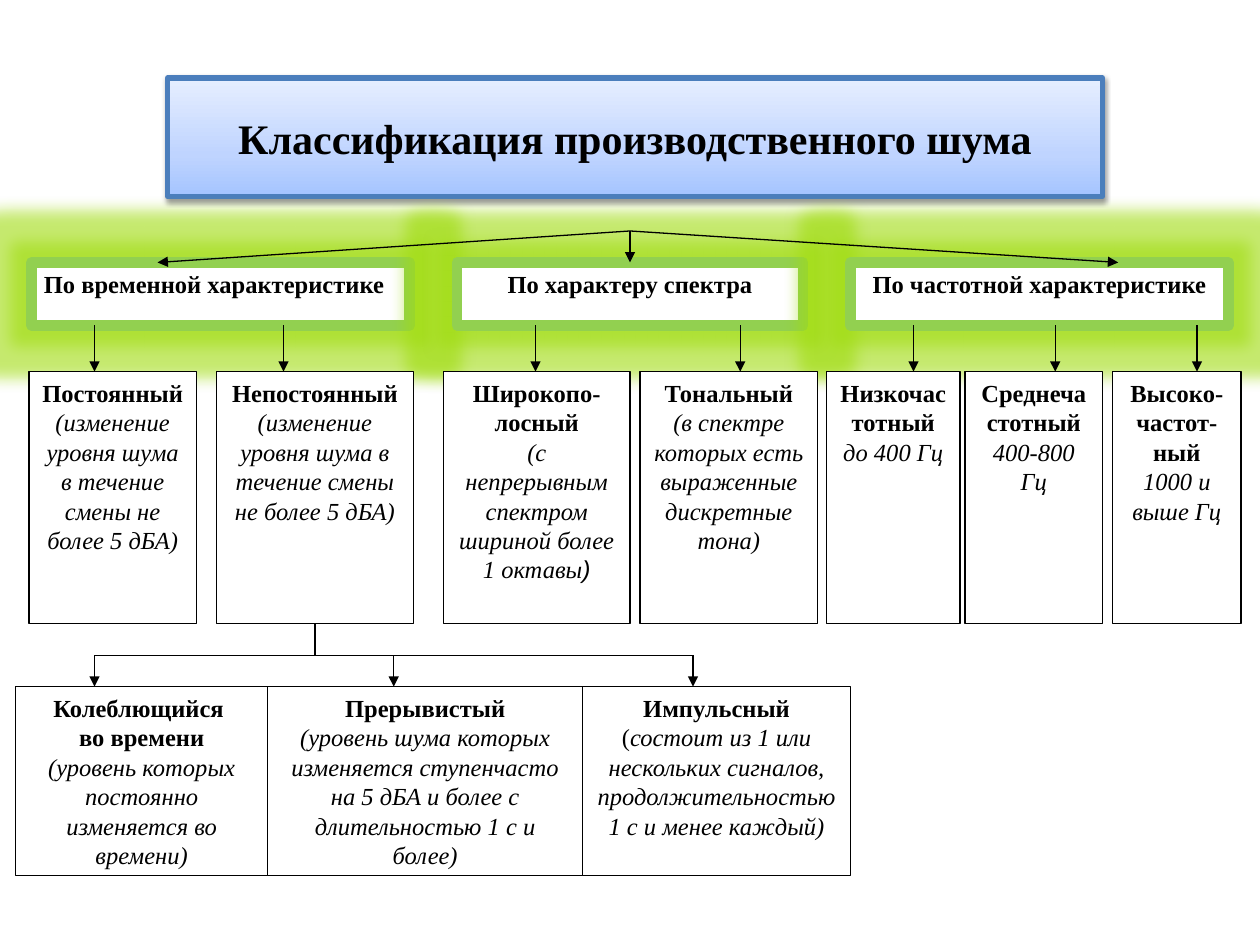
from dataclasses import dataclass

from lxml.etree import SubElement
from pptx import Presentation
from pptx.dml.color import RGBColor
from pptx.enum.shapes import MSO_CONNECTOR, MSO_SHAPE
from pptx.enum.text import MSO_ANCHOR, PP_ALIGN
from pptx.oxml import parse_xml
from pptx.oxml.ns import nsdecls, qn
from pptx.util import Inches, Pt


@dataclass(frozen=True)
class Theme:
    font: str = "Times New Roman"
    alt_font: str = "Arial"
    ink: str = "000000"
    paper: str = "FFFFFF"
    green: str = "92D050"
    glow: str = "A0DC10"
    blue: str = "4B7EBC"
    gradient: tuple = ((0, "A4C4FF"), (35, "BFD4FF"), (100, "E6EEFF"))
    title_size: int = 24
    body_size: int = 14
    hairline: float = 0.75
    title_line: int = 3
    category_line: int = 6


T = Theme()
W, H = Inches(10), Inches(7.5)
COL, ROW = W / 80, H / 90
BOLD, ITALIC, PLAIN = "bold", "italic", "plain"

TITLE_BOX = (10.64, 7.44, 59.36, 11.28)
FORK_ROW, CATEGORY_ROW, CATEGORY_ROWS = 22, 25, 6
LEAF_ROW, LEAF_ROWS = 35.4, 24
BUS_ROW, SUBTYPE_ROW, SUBTYPE_ROWS = 62.4, 65.4, 18

CATEGORIES = [
    ("По временной характеристике", 2, 24, PP_ALIGN.LEFT, 10),
    ("По характеру спектра", 29, 22, PP_ALIGN.CENTER, 40),
    ("По частотной характеристике", 54, 24, PP_ALIGN.CENTER, 71),
]
LEAVES = [
    (1.84, 10.64, 6, ["Постоянный"],
     [("(изменение уровня шума в течение смены не более 5 дБА)", ITALIC)]),
    (13.76, 12.48, 18, ["Непостоянный "],
     [("(изменение уровня шума в течение смены не более 5 дБА)", ITALIC)]),
    (28.16, 11.84, 34, ["Широкопо-лосный"],
     [("(с непрерывным спектром шириной более 1 октавы", ITALIC),
      (")", ITALIC, T.alt_font)]),
    (40.64, 11.28, 47, ["Тональный"],
     [("(в спектре которых есть выраженные дискретные тона)", ITALIC)]),
    (52.48, 8.48, 58, ["Низкочастотный"], [("до 400 Гц", ITALIC)]),
    (61.28, 8.72, 67, ["Среднечастотный"], [("400-800 Гц", ITALIC)]),
    (70.64, 8.16, 76, ["Высоко-частот-ный"], [("1000 и выше Гц", ITALIC)]),
]
SUBTYPES = [
    (1, 16, 6, ["Колеблющийся ", "во времени"],
     [("(уровень которых постоянно изменяется во времени)", ITALIC)]),
    (17, 20, 25, ["Прерывистый"],
     [("(уровень шума которых изменяется ступенчасто на 5 дБА и более "
       "с длительностью 1 с и более)", ITALIC)]),
    (37, 17, 44, ["Импульсный"],
     [("(", PLAIN),
      ("состоит из 1 или нескольких сигналов, "
       "продолжительностью 1 с и менее каждый)", ITALIC)]),
]


def rgb(value):
    return RGBColor.from_string(value)


def add_box(s, box, line, width):
    x, y, w, h = box
    sp = s.shapes.add_shape(MSO_SHAPE.RECTANGLE, round(x * COL), round(y * ROW),
                            round(w * COL), round(h * ROW))
    sp.shadow.inherit = False
    sp.fill.solid()
    sp.fill.fore_color.rgb = rgb(T.paper)
    sp.line.color.rgb = rgb(line)
    sp.line.width = Pt(width)
    sp.text_frame.word_wrap = True
    sp.text_frame.vertical_anchor = MSO_ANCHOR.TOP
    return sp


def add_text(sp, paragraphs, align=PP_ALIGN.CENTER, size=T.body_size):
    tf = sp.text_frame
    for i, runs in enumerate(paragraphs):
        p = tf.add_paragraph() if i else tf.paragraphs[0]
        p.alignment = align
        for text, style, *font in runs:
            r = p.add_run()
            r.text = text
            r.font.name = font[0] if font else T.font
            r.font.size = Pt(size)
            r.font.color.rgb = rgb(T.ink)
            r.font.bold = style == BOLD
            r.font.italic = style == ITALIC


def add_effect(sp, name, color, alpha, **attrs):
    effects = sp._element.spPr.find(qn("a:effectLst"))
    effect = SubElement(effects, qn(f"a:{name}"), {k: str(v) for k, v in attrs.items()})
    clr = SubElement(effect, qn("a:srgbClr"), val=color)
    SubElement(clr, qn("a:alpha"), val=str(alpha * 1000))


def set_gradient(sp, stops):
    gs = "".join(f'<a:gs pos="{pos * 1000}"><a:srgbClr val="{color}"/></a:gs>'
                 for pos, color in stops)
    grad = parse_xml(f'<a:gradFill {nsdecls("a")} rotWithShape="1"><a:gsLst>{gs}</a:gsLst>'
                     '<a:lin ang="16200000" scaled="0"/></a:gradFill>')
    spPr = sp._element.spPr
    spPr.replace(spPr.find(qn("a:solidFill")), grad)


def add_line(s, start, end, arrow=True):
    (x1, y1), (x2, y2) = start, end
    cx = s.shapes.add_connector(MSO_CONNECTOR.STRAIGHT, round(x1 * COL), round(y1 * ROW),
                                round(x2 * COL), round(y2 * ROW))
    cx.line.color.rgb = rgb(T.ink)
    cx.line.width = Pt(T.hairline)
    if arrow:
        SubElement(cx.line._get_or_add_ln(), qn("a:tailEnd"), type="triangle")
    SubElement(cx._element.spPr, qn("a:effectLst"))
    return cx


def title_banner(s, box):
    sp = add_box(s, box, T.blue, T.title_line)
    set_gradient(sp, T.gradient)
    add_effect(sp, "outerShdw", T.ink, 38, blurRad=Pt(3.1), dist=Pt(1.6),
               dir=5400000, rotWithShape=0)
    sp.text_frame.vertical_anchor = MSO_ANCHOR.MIDDLE
    add_text(sp, [[("Классификация производственного шума", BOLD)]], size=T.title_size)


def category_row(s, top, rows):
    boxes = []
    for text, x, w, align, _ in CATEGORIES:
        sp = add_box(s, (x, top, w, rows), T.green, T.category_line)
        add_effect(sp, "glow", T.glow, 60, rad=Pt(18))
        add_text(sp, [[(text, BOLD)]], align)
        boxes.append(sp)
    return boxes


def detail_row(s, items, top, rows):
    boxes = []
    for x, w, _, heads, detail in items:
        sp = add_box(s, (x, top, w, rows), T.ink, T.hairline)
        add_text(sp, [[(head, BOLD)] for head in heads] + [detail])
        boxes.append(sp)
    return boxes


def category_fork(s, middle_box):
    for _, x, w, _, tip in CATEGORIES:
        cx = add_line(s, (40, FORK_ROW), (tip, CATEGORY_ROW))
        if tip == x + w / 2:
            cx.end_connect(middle_box, 0)


def drop_arrows(s, items, top, bottom):
    for _, _, x, _, _ in items:
        add_line(s, (x, top), (x, bottom))


def subtype_bus(s, parent):
    stem = add_line(s, (20, LEAF_ROW + LEAF_ROWS), (20, BUS_ROW), arrow=False)
    stem.begin_connect(parent, 2)
    add_line(s, (SUBTYPES[0][2], BUS_ROW), (SUBTYPES[-1][2], BUS_ROW), arrow=False)
    drop_arrows(s, SUBTYPES, BUS_ROW, SUBTYPE_ROW)


def main():
    prs = Presentation()
    prs.slide_width, prs.slide_height = W, H
    s = prs.slides.add_slide(prs.slide_layouts[6])
    title_banner(s, TITLE_BOX)
    categories = category_row(s, CATEGORY_ROW, CATEGORY_ROWS)
    leaves = detail_row(s, LEAVES, LEAF_ROW, LEAF_ROWS)
    detail_row(s, SUBTYPES, SUBTYPE_ROW, SUBTYPE_ROWS)
    category_fork(s, categories[1])
    drop_arrows(s, LEAVES, CATEGORY_ROW + CATEGORY_ROWS, LEAF_ROW)
    subtype_bus(s, leaves[1])
    prs.save("out.pptx")


if __name__ == "__main__":
    main()
